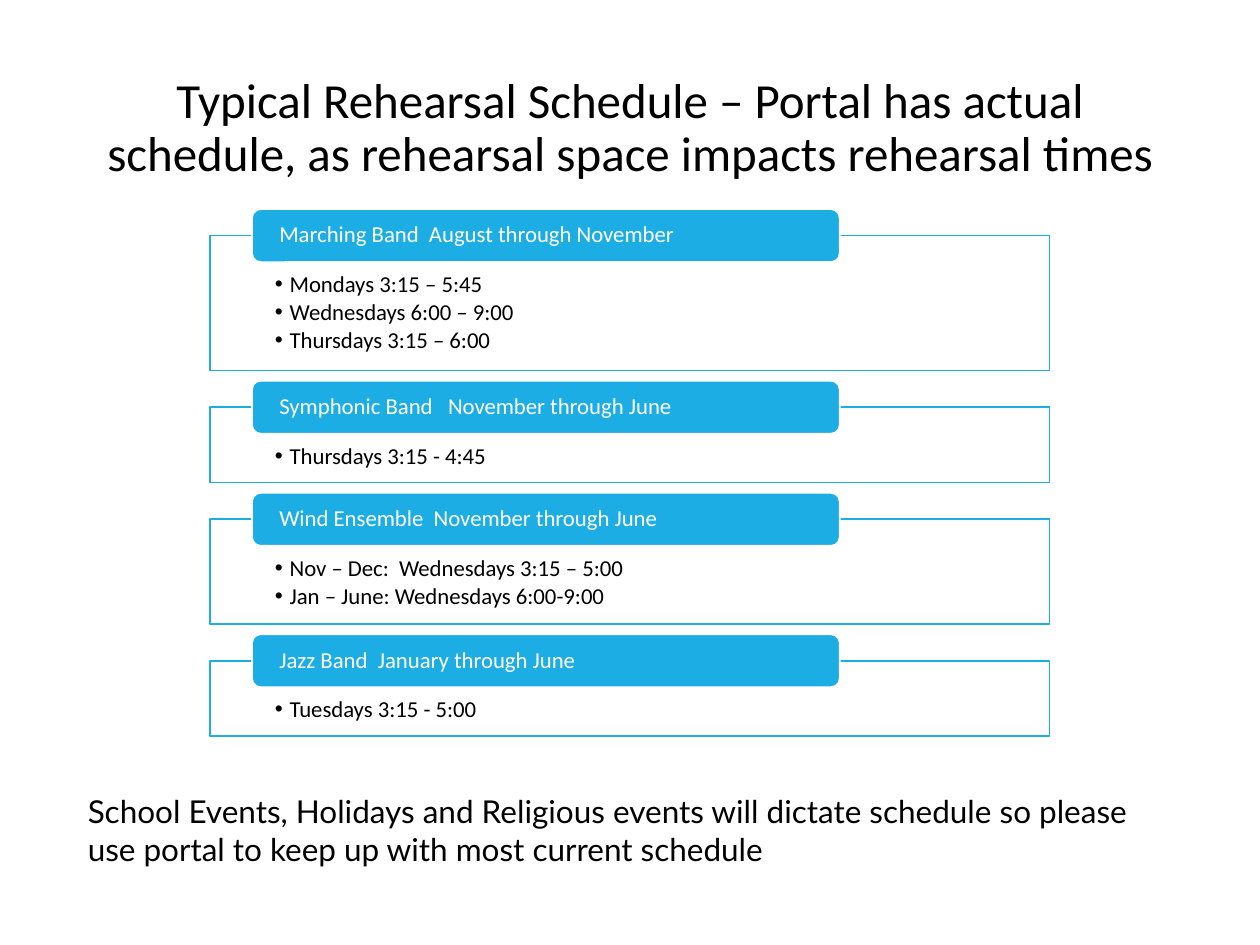
from lxml import etree
from pptx import Presentation
from pptx.dml.color import RGBColor
from pptx.enum.shapes import MSO_SHAPE
from pptx.enum.text import MSO_ANCHOR, MSO_AUTO_SIZE, PP_ALIGN
from pptx.oxml.ns import qn
from pptx.util import Cm, Pt

RECT, ROUND = MSO_SHAPE.RECTANGLE, MSO_SHAPE.ROUNDED_RECTANGLE
TOP, MIDDLE, BOTTOM = MSO_ANCHOR.TOP, MSO_ANCHOR.MIDDLE, MSO_ANCHOR.BOTTOM
LEFT, CENTER = PP_ALIGN.LEFT, PP_ALIGN.CENTER
FIXED = MSO_AUTO_SIZE.NONE

COLORS = {"blue": "1CADE4", "white": "FFFFFF", "black": "000000"}
TITLE = ("Typical Rehearsal Schedule – Portal has actual schedule, "
         "as rehearsal space impacts rehearsal times")
NOTE = ("School Events, Holidays and Religious events will dictate schedule "
        "so please use portal to keep up with most current schedule")
BANDS = [
    ("Marching Band  August through November", 2.72,
     ["Mondays 3:15 – 5:45", "Wednesdays 6:00 – 9:00", "Thursdays 3:15 – 6:00"]),
    ("Symphonic Band   November through June", 1.52, ["Thursdays 3:15 - 4:45"]),
    ("Wind Ensemble  November through June", 2.11,
     ["Nov – Dec:  Wednesdays 3:15 – 5:00", "Jan – June: Wednesdays 6:00-9:00"]),
    ("Jazz Band  January through June", 1.52, ["Tuesdays 3:15 - 5:00"]),
]
START, GAP, TAB = 4.75, 0.74, 1.07


def color(name):
    """Return the named colour."""
    return RGBColor.from_string(COLORS[name])


def place(shape, x, y, w, h):
    """Move and size a shape, in centimetres."""
    shape.left, shape.top, shape.width, shape.height = map(Cm, (x, y, w, h))


def write(shape, text, size, ink="black", font="Calibri", align=LEFT,
          anchor=TOP, space=0.9, after=0):
    """Fill a shape with text and format every paragraph."""
    frame = shape.text_frame
    frame.text = text
    frame.word_wrap = True
    frame.auto_size = FIXED
    frame.vertical_anchor = anchor
    for para in frame.paragraphs:
        para.alignment = align
        para.line_spacing = space
        para.space_after = Pt(after)
        for run in para.runs:
            run.font.size = Pt(size)
            run.font.name = font
            run.font.color.rgb = color(ink)


def inset(shape, side, top, bottom):
    """Set the text margins, in centimetres."""
    frame = shape.text_frame
    frame.margin_left = frame.margin_right = Cm(side)
    frame.margin_top, frame.margin_bottom = Cm(top), Cm(bottom)


def bullet(para):
    """Give a paragraph a round bullet and a hanging indent."""
    props = para._p.get_or_add_pPr()
    props.set("marL", str(Cm(0.3)))
    props.set("indent", str(-Cm(0.3)))
    etree.SubElement(props, qn("a:buFont")).set("typeface", "Arial")
    etree.SubElement(props, qn("a:buChar")).set("char", "•")


def add_box(slide, kind, spot, fill, line):
    """Add a flat shape with a thin outline."""
    box = slide.shapes.add_shape(kind, *map(Cm, spot))
    box.shadow.inherit = False
    box.fill.solid()
    box.fill.fore_color.rgb = color(fill)
    box.line.color.rgb = color(line)
    box.line.width = Pt(1)
    return box


def add_band(slide, y, name, height, times):
    """Add one band: a framed list of times under a name tab."""
    frame = add_box(slide, RECT, (4.23, y, 16.93, height), "white", "blue")
    write(frame, "\n".join(times), 13, after=2)
    inset(frame, 1.31, 0.75, 0.25)
    for para in frame.text_frame.paragraphs:
        bullet(para)
    tab = add_box(slide, ROUND, (5.08, y - TAB / 2, 11.85, TAB), "blue", "white")
    write(tab, name, 13, "white", anchor=MIDDLE)
    inset(tab, 0.5, 0, 0)


def main():
    """Build the rehearsal schedule slide."""
    deck = Presentation()
    deck.slide_width, deck.slide_height = Cm(25.4), Cm(19.05)
    slide = deck.slides.add_slide(deck.slide_layouts[5])
    title = slide.shapes.title
    place(title, 1.75, 1.02, 21.9, 2.77)
    write(title, TITLE, 28, align=CENTER, anchor=BOTTOM)
    note = slide.shapes.add_textbox(*map(Cm, (1.52, 15.85, 22.35, 1.8)))
    write(note, NOTE, 18, font="Lato", space=1.0)
    y = START
    for name, height, times in BANDS:
        add_band(slide, y, name, height, times)
        y += height + GAP
    deck.save("out.pptx")


if __name__ == "__main__":
    main()
